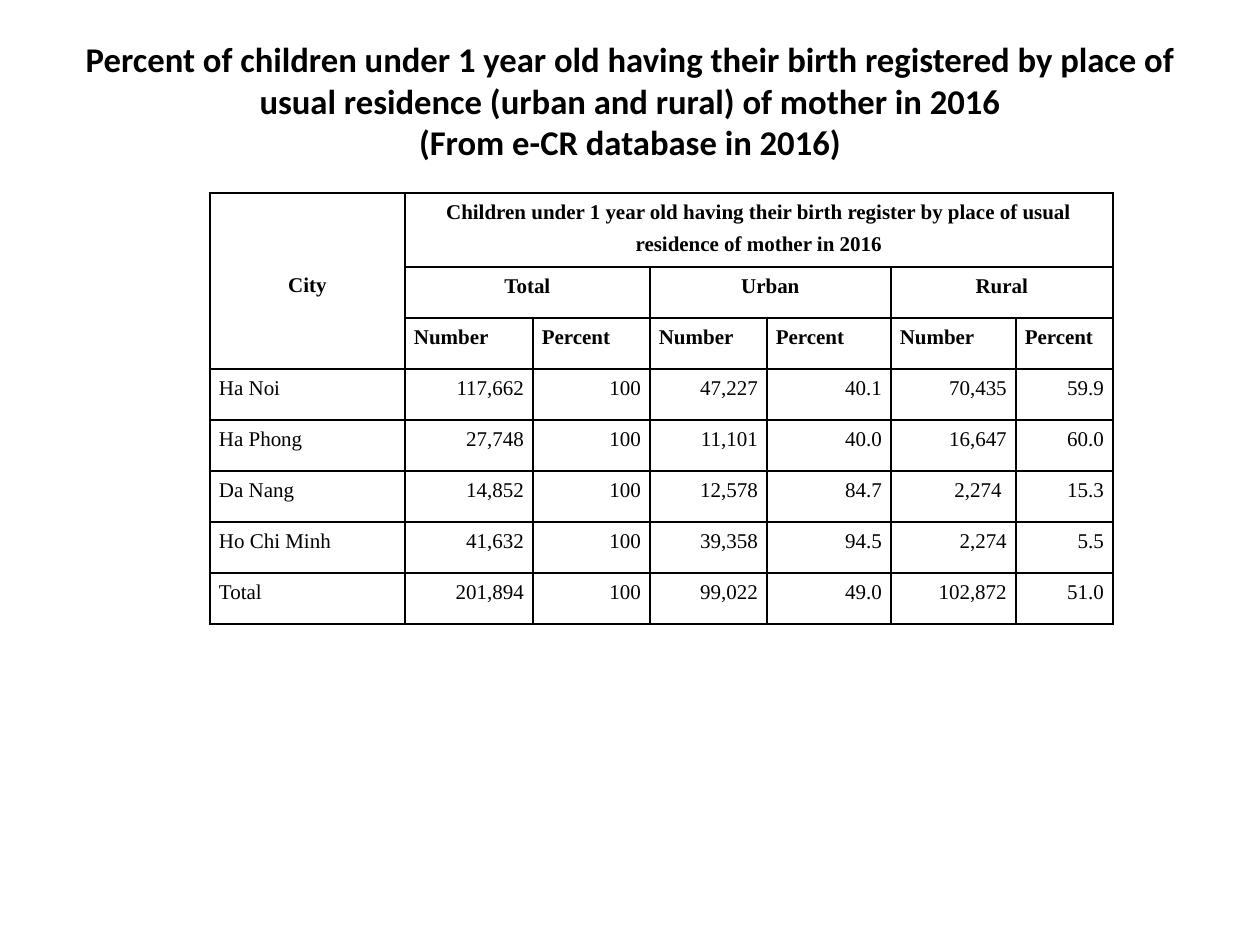
from dataclasses import dataclass

from lxml import etree
from pptx import Presentation
from pptx.dml.color import RGBColor
from pptx.enum import text
from pptx.oxml import ns
from pptx.util import Emu, Pt

BLACK = RGBColor(0x00, 0x00, 0x00)
EMU_PER_INCH = 914400
PX_PER_INCH = 126
COLUMN_WIDTHS = (195, 128, 117, 117, 124, 125, 97)
ROW_HEIGHTS = (74,) + (51,) * 7
GROUPS = ("Total", "Urban", "Rural")
CITY_ROWS = (
    ("Ha Noi", "117,662", "100", "47,227", "40.1", "70,435", "59.9"),
    ("Ha Phong", "27,748", "100", "11,101", "40.0", "16,647", "60.0"),
    ("Da Nang", "14,852", "100", "12,578", "84.7", "2,274 ", "15.3"),
    ("Ho Chi Minh", "41,632", "100", "39,358", "94.5", "2,274", "5.5"),
    ("Total", "201,894", "100", "99,022", "49.0", "102,872", "51.0"),
)


@dataclass(frozen=True)
class Entry:
    row: int
    column: int
    words: str
    align: text.PP_ALIGN
    bold: bool = False
    rows: int = 1
    columns: int = 1
    anchor: text.MSO_ANCHOR = text.MSO_ANCHOR.TOP


def px(length: int) -> Emu:
    return Emu(round(length * EMU_PER_INCH / PX_PER_INCH))


def table_entries() -> list[Entry]:
    center, left, right = text.PP_ALIGN.CENTER, text.PP_ALIGN.JUSTIFY, text.PP_ALIGN.RIGHT
    heading = ("Children under 1 year old having their birth register "
               "by place of usual residence of mother in 2016")
    entries = [
        Entry(0, 0, "City", center, True, rows=3, anchor=text.MSO_ANCHOR.MIDDLE),
        Entry(0, 1, heading, center, True, columns=6),
    ]
    for index, group in enumerate(GROUPS):
        column = 1 + 2 * index
        entries.append(Entry(1, column, group, center, True, columns=2))
        entries.append(Entry(2, column, "Number", left, True))
        entries.append(Entry(2, column + 1, "Percent", left, True))
    for row, values in enumerate(CITY_ROWS, start=3):
        for column, value in enumerate(values):
            entries.append(Entry(row, column, value, right if column else left))
    return entries


def outline_cell(cell) -> None:
    properties = cell._tc.get_or_add_tcPr()
    for side in ("a:lnL", "a:lnR", "a:lnT", "a:lnB"):
        line = etree.SubElement(properties, ns.qn(side), w=str(Pt(1)))
        fill = etree.SubElement(line, ns.qn("a:solidFill"))
        etree.SubElement(fill, ns.qn("a:srgbClr"), val=str(BLACK))
    cell.fill.background()


def fill_entry(table, entry: Entry) -> None:
    cell = table.cell(entry.row, entry.column)
    if entry.rows > 1 or entry.columns > 1:
        cell.merge(table.cell(entry.row + entry.rows - 1, entry.column + entry.columns - 1))
    cell.text = entry.words
    cell.vertical_anchor = entry.anchor
    para = cell.text_frame.paragraphs[0]
    para.alignment = entry.align
    para.line_spacing = Pt(18)
    para.font.name = "Times New Roman"
    para.font.size = Pt(12)
    para.font.bold = entry.bold
    para.font.color.rgb = BLACK


def add_registration_table(page) -> None:
    frame = page.shapes.add_table(
        len(ROW_HEIGHTS), len(COLUMN_WIDTHS), px(210), px(193),
        px(sum(COLUMN_WIDTHS)), px(sum(ROW_HEIGHTS)))
    table = frame.table
    table.first_row = False
    table.horz_banding = False
    for column, width in zip(table.columns, COLUMN_WIDTHS):
        column.width = px(width)
    for row, height in zip(table.rows, ROW_HEIGHTS):
        row.height = px(height)
    for cell in table.iter_cells():
        cell.margin_left = cell.margin_right = px(9)
        cell.margin_top = cell.margin_bottom = 0
        outline_cell(cell)
    for entry in table_entries():
        fill_entry(table, entry)


def set_title(page) -> None:
    title = page.shapes.title
    title.left, title.top, title.width, title.height = px(63), px(38), px(1134), px(157)
    frame = title.text_frame
    frame.text = ("Percent of children under 1 year old having their birth registered "
                  "by place of usual residence (urban and rural) of mother in 2016"
                  "\v(From e-CR database in 2016)")
    frame.word_wrap = True
    frame.auto_size = text.MSO_AUTO_SIZE.NONE
    frame.vertical_anchor = text.MSO_ANCHOR.TOP
    frame.margin_top = frame.margin_bottom = 0
    para = frame.paragraphs[0]
    para.alignment = text.PP_ALIGN.CENTER
    para.font.name = "Calibri"
    para.font.size = Pt(19.8)
    para.font.bold = True
    para.font.color.rgb = BLACK


def main() -> None:
    deck = Presentation()
    deck.slide_width, deck.slide_height = px(1260), px(945)
    page = deck.slides.add_slide(deck.slide_layouts[5])
    set_title(page)
    add_registration_table(page)
    deck.save("out.pptx")


if __name__ == "__main__":
    main()
